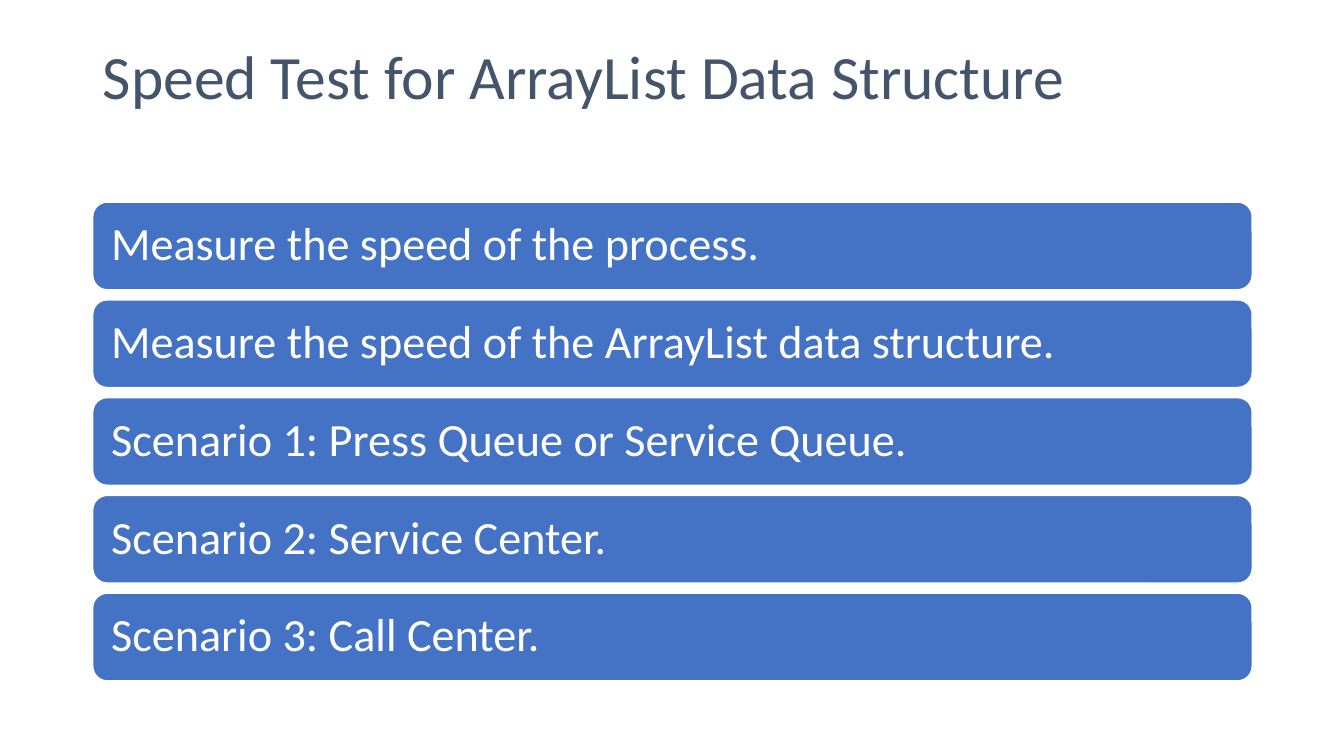
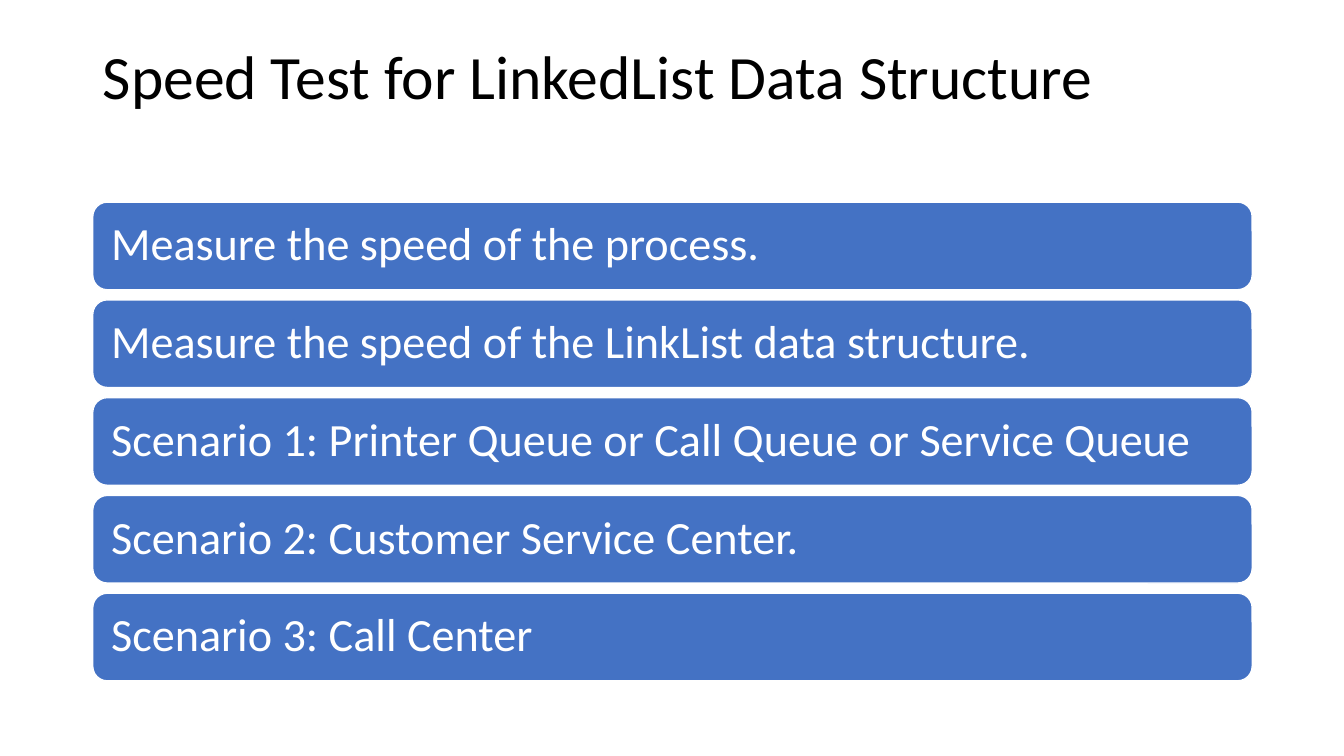
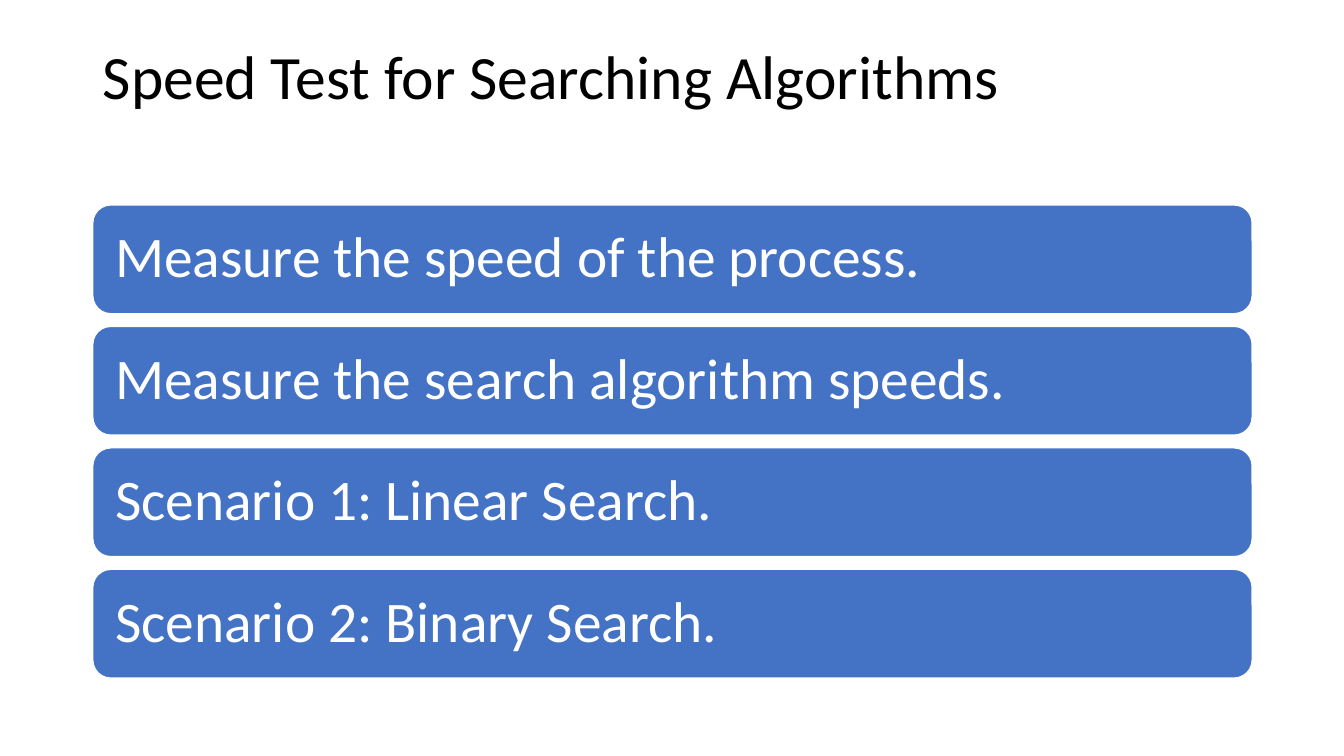
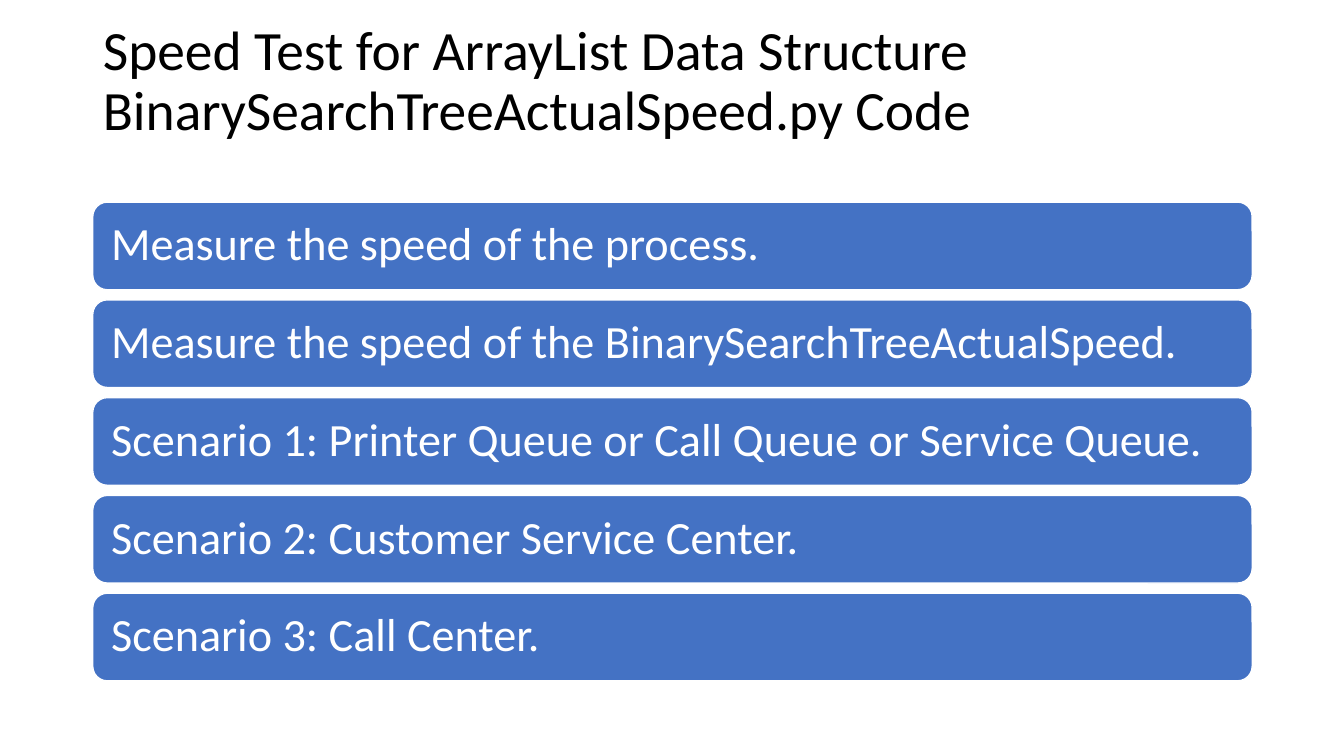
"""Build four speed-test slides, each a title above a stack of rounded bars."""
import pptx
import pptx.dml.color
import pptx.enum.shapes
import pptx.enum.text
import pptx.util

Inches = pptx.util.Inches
Pt = pptx.util.Pt

COLORS = {"slate": "44546A", "black": "000000", "blue": "4472C4", "white": "FFFFFF"}
FONT = "Calibri"
LINE_SPACING = 0.9
LINE_HEIGHT = 1.22 * LINE_SPACING
LEFT, WIDTH = 0.92, 11.5
TITLE_TOP, TITLE_HEIGHT = 0.4, 1.45
STACK_MIDDLE = 4.38

FIVE_BARS = {"height": 0.87, "gap": 0.1, "size": 33, "inset": 0.14}
FOUR_BARS = {"height": 1.08, "gap": 0.125, "size": 41, "inset": 0.17}

SLIDES = [
    {
        "title": "Speed Test for ArrayList Data Structure",
        "title_size": 44,
        "title_color": "slate",
        "style": FIVE_BARS,
        "bars": [
            "Measure the speed of the process.",
            "Measure the speed of the ArrayList data structure.",
            "Scenario 1: Press Queue or Service Queue.",
            "Scenario 2: Service Center.",
            "Scenario 3: Call Center.",
        ],
    },
    {
        "title": "Speed Test for LinkedList Data Structure",
        "title_size": 44,
        "title_color": "black",
        "style": FIVE_BARS,
        "bars": [
            "Measure the speed of the process.",
            "Measure the speed of the LinkList data structure.",
            "Scenario 1: Printer Queue or Call Queue or Service Queue",
            "Scenario 2: Customer Service Center.",
            "Scenario 3: Call Center",
        ],
    },
    {
        "title": "Speed Test for Searching Algorithms",
        "title_size": 44,
        "title_color": "black",
        "style": FOUR_BARS,
        "bars": [
            "Measure the speed of the process.",
            "Measure the search algorithm speeds.",
            "Scenario 1: Linear Search.",
            "Scenario 2: Binary Search.",
        ],
    },
    {
        "title": "Speed Test for ArrayList Data Structure\vBinarySearchTreeActualSpeed.py Code",
        "title_size": 39.6,
        "title_color": "black",
        "style": FIVE_BARS,
        "bars": [
            "Measure the speed of the process.",
            "Measure the speed of the BinarySearchTreeActualSpeed.",
            "Scenario 1: Printer Queue or Call Queue or Service Queue.",
            "Scenario 2: Customer Service Center.",
            "Scenario 3: Call Center.",
        ],
    },
]


def rgb(name):
    return pptx.dml.color.RGBColor.from_string(COLORS[name])


def set_text(shape, text, size, color):
    text_frame = shape.text_frame
    text_frame.text = text
    text_frame.word_wrap = True
    text_frame.auto_size = pptx.enum.text.MSO_AUTO_SIZE.NONE
    text_frame.vertical_anchor = pptx.enum.text.MSO_ANCHOR.MIDDLE
    paragraph = text_frame.paragraphs[0]
    paragraph.alignment = pptx.enum.text.PP_ALIGN.LEFT
    paragraph.line_spacing = LINE_SPACING
    for run in paragraph.runs:
        run.font.name = FONT
        run.font.size = Pt(size)
        run.font.color.rgb = rgb(color)


def place_title(slide, text, size, color):
    title = slide.shapes.title
    title.left, title.top = Inches(LEFT), Inches(TITLE_TOP)
    title.width, title.height = Inches(WIDTH), Inches(TITLE_HEIGHT)
    set_text(title, text, size, color)
    title.text_frame.margin_bottom = Inches(0.05) + Pt(size * LINE_HEIGHT)


def add_bars(slide, texts, style):
    pitch = style["height"] + style["gap"]
    top = STACK_MIDDLE - (len(texts) * pitch - style["gap"]) / 2
    for index, text in enumerate(texts):
        bar = slide.shapes.add_shape(
            pptx.enum.shapes.MSO_SHAPE.ROUNDED_RECTANGLE,
            Inches(LEFT), Inches(top + index * pitch),
            Inches(WIDTH), Inches(style["height"]),
        )
        bar.shadow.inherit = False
        bar.fill.solid()
        bar.fill.fore_color.rgb = rgb("blue")
        bar.line.color.rgb = rgb("white")
        bar.line.width = Pt(1)
        set_text(bar, text, style["size"], "white")
        text_frame = bar.text_frame
        text_frame.margin_left = text_frame.margin_right = Inches(style["inset"])
        text_frame.margin_top = text_frame.margin_bottom = Inches(style["inset"])


def main():
    presentation = pptx.Presentation()
    presentation.slide_width = Inches(13.33)
    presentation.slide_height = Inches(7.5)
    title_only = presentation.slide_layouts[5]
    for content in SLIDES:
        slide = presentation.slides.add_slide(title_only)
        place_title(slide, content["title"], content["title_size"], content["title_color"])
        add_bars(slide, content["bars"], content["style"])
    presentation.save("out.pptx")


if __name__ == "__main__":
    main()
